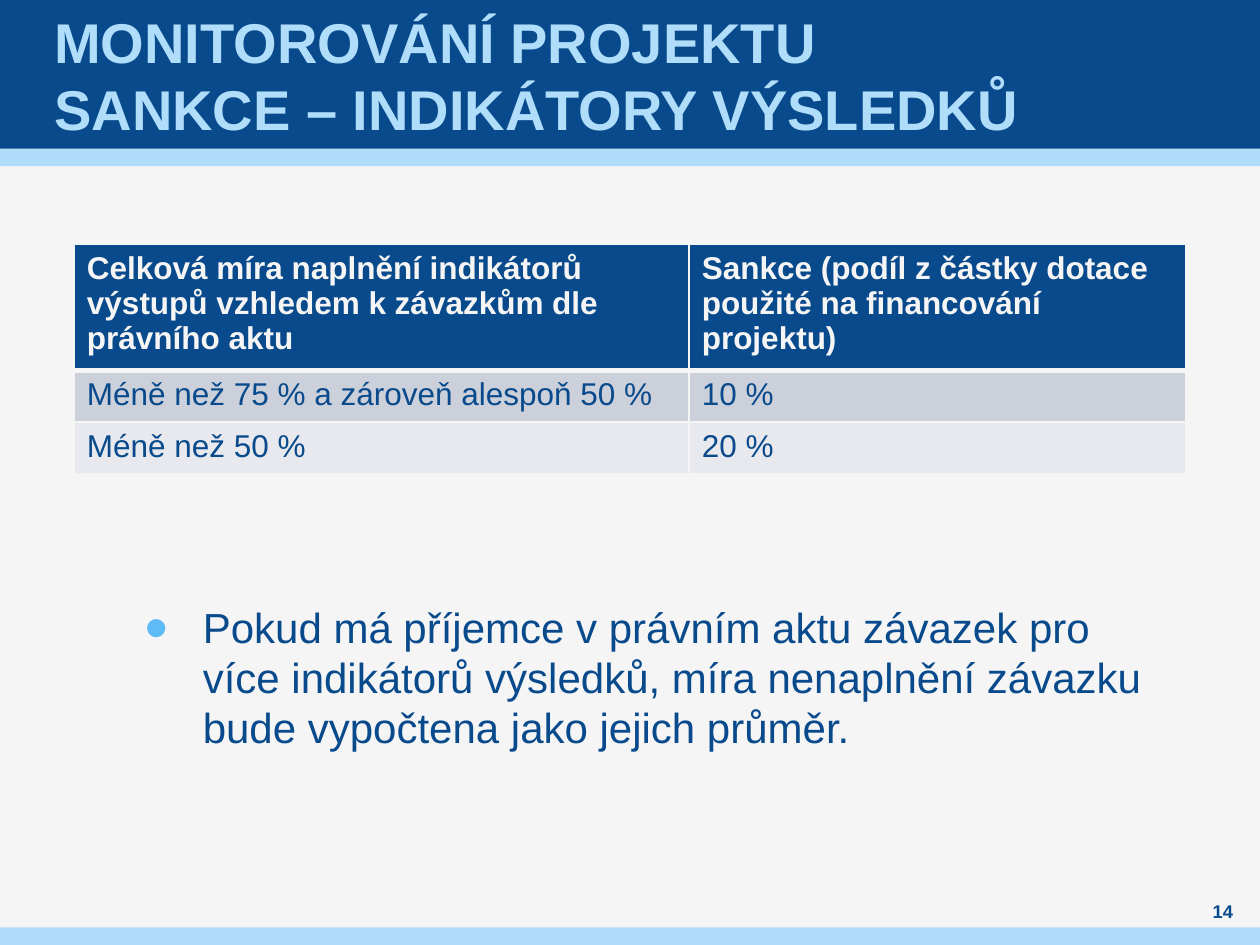
import pptx
import pptx.dml.color
import pptx.enum.shapes
import pptx.enum.text
import pptx.oxml
import pptx.oxml.ns
import pptx.util
from pptx.util import Inches

NAVY, SKY, PAPER = "084A8B", "AFDDFA", "F5F5F5"
BULLET = "5FBBF5"
ROW_FILLS = [NAVY, "CCD0DA", "E7E9EE"]
ROWS = [
    ("Celková míra naplnění indikátorů výstupů vzhledem k závazkům dle právního aktu",
     "Sankce (podíl z částky dotace použité na financování projektu)"),
    ("Méně než 75 % a zároveň alespoň 50 %", "10 %"),
    ("Méně než 50 %", "20 %"),
]
COL_WIDTHS = [4.88, 3.94]
ROW_HEIGHTS = [0.93, 0.41, 0.41]
NOTE = ("Pokud má příjemce v právním aktu závazek pro více indikátorů výsledků, "
        "míra nenaplnění závazku bude vypočtena jako jejich průměr.")


def rgb(color):
    return pptx.dml.color.RGBColor.from_string(color)


def add_xml(parent, xml):
    namespace = pptx.oxml.ns.nsdecls("a")
    parent.append(pptx.oxml.parse_xml(xml.replace(" ", f" {namespace} ", 1)))


def add_run(p, text, size, color, bold=False):
    r = p.add_run()
    r.text = text
    r.font.name = "Arial"
    r.font.size = pptx.util.Pt(size)
    r.font.bold = bold
    r.font.color.rgb = rgb(color)


def add_band(s, top, height, color):
    sp = s.shapes.add_shape(pptx.enum.shapes.MSO_SHAPE.RECTANGLE,
                            0, Inches(top), Inches(10), Inches(height))
    sp.shadow.inherit = False
    sp.fill.solid()
    sp.fill.fore_color.rgb = rgb(color)
    sp.line.fill.background()


def add_text_box(s, left, top, width, height, side_inset=0, middle=False):
    """Add an empty wrapped box and return its first paragraph."""
    sp = s.shapes.add_textbox(Inches(left), Inches(top), Inches(width), Inches(height))
    tf = sp.text_frame
    tf.word_wrap = True
    tf.margin_left = tf.margin_right = Inches(side_inset)
    tf.margin_top = tf.margin_bottom = 0
    if middle:
        tf.vertical_anchor = pptx.enum.text.MSO_ANCHOR.MIDDLE
    return tf.paragraphs[0]


def add_title(s, lines):
    p = add_text_box(s, 0.39, 0, 9.21, 1.18, side_inset=0.04, middle=True)
    for i, line in enumerate(lines):
        if i:
            p.add_line_break()
        add_run(p, line, 32, SKY, bold=True)


def add_page_number(s, number):
    p = add_text_box(s, 9.45, 7.13, 0.51, 0.2, middle=True)
    p.alignment = pptx.enum.text.PP_ALIGN.CENTER
    add_run(p, number, 10.5, NAVY, bold=True)


def set_borders(cell, bottom_width):
    tc_pr = cell._tc.get_or_add_tcPr()
    for side, width in (("L", 1), ("R", 1), ("T", 1), ("B", bottom_width)):
        add_xml(tc_pr, f'<a:ln{side} w="{pptx.util.Pt(width)}"><a:solidFill>'
                       f'<a:srgbClr val="{PAPER}"/></a:solidFill></a:ln{side}>')


def add_sanctions_table(s):
    table = s.shapes.add_table(len(ROWS), len(COL_WIDTHS), Inches(0.59), Inches(1.94),
                               Inches(sum(COL_WIDTHS)), Inches(sum(ROW_HEIGHTS))).table
    for column, width in zip(table.columns, COL_WIDTHS):
        column.width = Inches(width)
    for i, texts in enumerate(ROWS):
        header = i == 0
        table.rows[i].height = Inches(ROW_HEIGHTS[i])
        for j, text in enumerate(texts):
            cell = table.cell(i, j)
            set_borders(cell, 3 if header else 1)
            cell.fill.solid()
            cell.fill.fore_color.rgb = rgb(ROW_FILLS[i])
            add_run(cell.text_frame.paragraphs[0], text, 18,
                    PAPER if header else NAVY, bold=header)


def add_bullet_note(s, text):
    p = add_text_box(s, 0.83, 4.77, 8.27, 2.05)
    p.line_spacing = pptx.util.Pt(28.8)
    p.space_after = pptx.util.Pt(6)
    p_pr = p._p.get_or_add_pPr()
    p_pr.set("marL", str(Inches(0.78)))
    p_pr.set("indent", str(Inches(-0.47)))
    add_xml(p_pr, f'<a:buClr ><a:srgbClr val="{BULLET}"/></a:buClr>')
    add_xml(p_pr, '<a:buFont typeface="Arial"/>')
    add_xml(p_pr, '<a:buChar char="●"/>')
    add_run(p, text, 24, NAVY)


def main():
    prs = pptx.Presentation()
    prs.slide_width, prs.slide_height = Inches(10), Inches(7.5)
    s = prs.slides.add_slide(prs.slide_layouts[6])
    s.background.fill.solid()
    s.background.fill.fore_color.rgb = rgb(PAPER)
    add_band(s, 1.18, 0.14, SKY)
    add_band(s, 0, 1.18, NAVY)
    add_band(s, 7.36, 0.14, SKY)
    add_title(s, ["MONITOROVÁNÍ PROJEKTU", "SANKCE – INDIKÁTORY VÝSLEDKŮ"])
    add_page_number(s, "14")
    add_sanctions_table(s)
    add_bullet_note(s, NOTE)
    prs.save("out.pptx")


if __name__ == "__main__":
    main()
